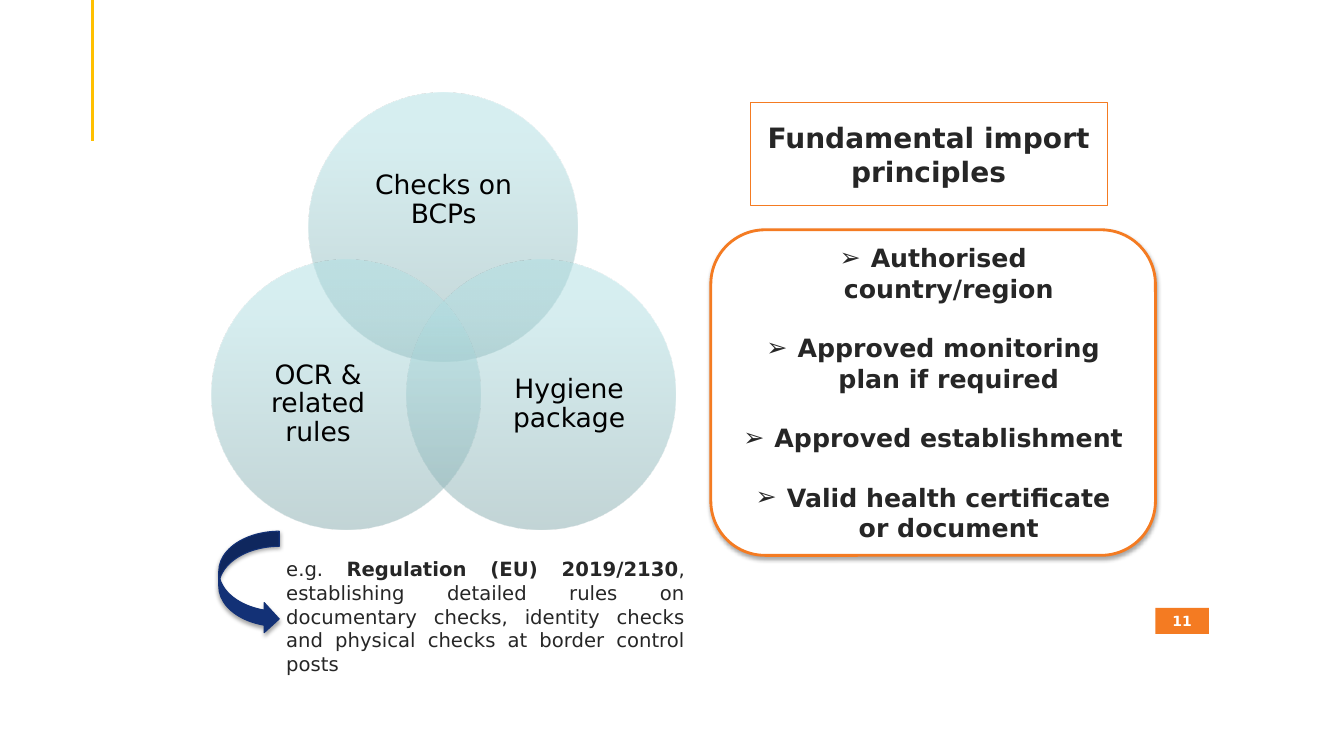
from dataclasses import dataclass

from lxml.etree import SubElement
from pptx import Presentation
from pptx.dml.color import RGBColor
from pptx.enum.shapes import MSO_CONNECTOR, MSO_SHAPE
from pptx.enum.text import MSO_ANCHOR, MSO_AUTO_SIZE, PP_ALIGN as Align
from pptx.oxml.ns import qn
from pptx.util import Inches, Pt

FONT = "DejaVu Sans"
WHITE = RGBColor(0xFF, 0xFF, 0xFF)
BLACK = RGBColor(0x00, 0x00, 0x00)
INK = RGBColor(0x26, 0x26, 0x26)
ORANGE = RGBColor(0xF4, 0x7B, 0x22)
GOLD = RGBColor(0xFF, 0xC0, 0x00)
NAVY = RGBColor(0x13, 0x31, 0x76)
TEAL = RGBColor(0x87, 0xAB, 0xAE)
AQUA = RGBColor(0xAF, 0xDE, 0xE2)
PALE = RGBColor(0xAF, 0xE0, 0xE4)
STOPS = [(0, TEAL), (80, AQUA), (100, PALE)]
SIDE = 2.67


@dataclass
class Box:
    x: float
    y: float
    w: float
    h: float


@dataclass
class Ring:
    text: str
    x: float
    y: float
    label: Box


RINGS = [
    Ring("Checks on BCPs", 3.06, 0.92, Box(3.71, 1.56, 1.38, 0.85)),
    Ring("Hygiene package", 4.03, 2.58, Box(5.08, 3.49, 1.13, 1.04)),
    Ring("OCR & related rules", 2.1, 2.58, Box(2.59, 3.49, 1.13, 1.04)),
]
RULES = [
    "Authorised country/region",
    "Approved monitoring plan if required",
    "Approved establishment",
    "Valid health certificate or document",
]


def place(shape, box: Box) -> None:
    shape.left, shape.top = Inches(box.x), Inches(box.y)
    shape.width, shape.height = Inches(box.w), Inches(box.h)


def style(para, size: int, color: RGBColor, align: Align, bold=None) -> None:
    para.alignment = align
    font = para.font
    font.name, font.size, font.bold = FONT, Pt(size), bold
    font.color.rgb = color


def add_form(slide, kind: MSO_SHAPE, box: Box, fill: RGBColor = None,
             line: RGBColor = None, width: float = 0.75):
    shape = slide.shapes.add_shape(kind, 0, 0, 0, 0)
    place(shape, box)
    shape.shadow.inherit = False
    if fill is not None:
        shape.fill.solid()
        shape.fill.fore_color.rgb = fill
    if line is None:
        shape.line.fill.background()
    else:
        shape.line.color.rgb = line
        shape.line.width = Pt(width)
    return shape


def add_text(slide, box: Box):
    frame = slide.shapes.add_textbox(0, 0, 0, 0)
    place(frame, box)
    frame.text_frame.word_wrap = True
    return frame.text_frame


def add_alpha(parent, color: RGBColor, share: int) -> None:
    tint = SubElement(parent, qn("a:srgbClr"), val=str(color))
    SubElement(tint, qn("a:alpha"), val=str(share * 1000))


def add_shade(shape) -> None:
    effects = shape._element.spPr.find(qn("a:effectLst"))
    shade = SubElement(effects, qn("a:outerShdw"), blurRad=str(Pt(3.1)),
                       dist=str(Pt(1.8)), dir="5400000", rotWithShape="0")
    add_alpha(shade, BLACK, 35)


def add_ring(slide, ring: Ring) -> None:
    shape = add_form(slide, MSO_SHAPE.OVAL, Box(ring.x, ring.y, SIDE, SIDE))
    shape.fill.gradient()
    shape.fill.gradient_angle = 90
    stops = shape._element.spPr.find(f"{qn('a:gradFill')}/{qn('a:gsLst')}")
    for old in list(stops):
        stops.remove(old)
    for pos, color in STOPS:
        add_alpha(SubElement(stops, qn("a:gs"), pos=str(pos * 1000)), color, 50)

    frame = add_text(slide, ring.label)
    frame.margin_left = frame.margin_right = 0
    frame.margin_top = frame.margin_bottom = 0
    frame.vertical_anchor = MSO_ANCHOR.MIDDLE
    para = frame.paragraphs[0]
    para.text = ring.text
    para.line_spacing = 0.9
    style(para, 19, BLACK, Align.CENTER)


def add_rules(slide, body) -> None:
    # Rounded panel, with the list inside its corners
    panel = add_form(slide, MSO_SHAPE.ROUNDED_RECTANGLE,
                     Box(7.05, 2.28, 4.41, 3.23), WHITE, ORANGE, 2)
    add_shade(panel)
    body._element.addprevious(panel._element)
    place(body, Box(7.21, 2.44, 4.09, 2.91))
    frame = body.text_frame
    frame.auto_size = MSO_AUTO_SIZE.NONE
    frame.vertical_anchor = MSO_ANCHOR.MIDDLE
    for i, rule in enumerate(RULES):
        para = frame.add_paragraph() if i else frame.paragraphs[0]
        para.text = rule
        props = para._p.get_or_add_pPr()
        props.set("marL", str(Inches(0.31)))
        props.set("indent", str(Inches(-0.31)))
        SubElement(props, qn("a:buChar"), char="➢")
        para.space_before = Pt(21 if i else 0)
        style(para, 18, INK, Align.CENTER, True)


def add_note(slide) -> None:
    para = add_text(slide, Box(2.74, 5.48, 4.15, 1.45)).paragraphs[0]
    style(para, 14, INK, Align.JUSTIFY)
    for text, bold in [
        ("e.g. ", False),
        ("Regulation (EU) 2019/2130", True),
        (", establishing detailed rules on documentary checks, identity "
         "checks and physical checks at border control posts", False),
    ]:
        run = para.add_run()
        run.text = text
        run.font.bold = bold


def main() -> None:
    deck = Presentation()
    deck.slide_width, deck.slide_height = Inches(13.33), Inches(7.5)
    slide = deck.slides.add_slide(deck.slide_layouts[1])

    # Accent line and page number
    accent = slide.shapes.add_connector(
        MSO_CONNECTOR.STRAIGHT, Inches(0.92), 0, Inches(0.92), Inches(1.4))
    accent.line.color.rgb = GOLD
    accent.line.width = Pt(2.25)
    SubElement(accent._element.spPr, qn("a:effectLst"))
    page = add_form(slide, MSO_SHAPE.RECTANGLE, Box(11.46, 6.03, 0.53, 0.26), ORANGE)
    para = page.text_frame.paragraphs[0]
    para.text = "11"
    style(para, 10, WHITE, Align.CENTER, True)

    # Venn diagram
    for ring in RINGS:
        add_ring(slide, ring)

    # Title
    title = slide.shapes.title
    place(title, Box(7.44, 1.02, 3.54, 1.02))
    title.line.color.rgb = ORANGE
    title.line.width = Pt(0.75)
    frame = title.text_frame
    frame.text = "Fundamental import principles"
    frame.auto_size = MSO_AUTO_SIZE.NONE
    frame.vertical_anchor = MSO_ANCHOR.MIDDLE
    style(frame.paragraphs[0], 20, INK, Align.CENTER, True)

    # Principles, note and arrow
    add_rules(slide, slide.placeholders[1])
    add_note(slide)
    arrow = add_form(slide, MSO_SHAPE.CURVED_RIGHT_ARROW,
                     Box(2.17, 5.27, 0.6, 1.02), NAVY, NAVY)
    add_shade(arrow)

    deck.save("out.pptx")


if __name__ == "__main__":
    main()
